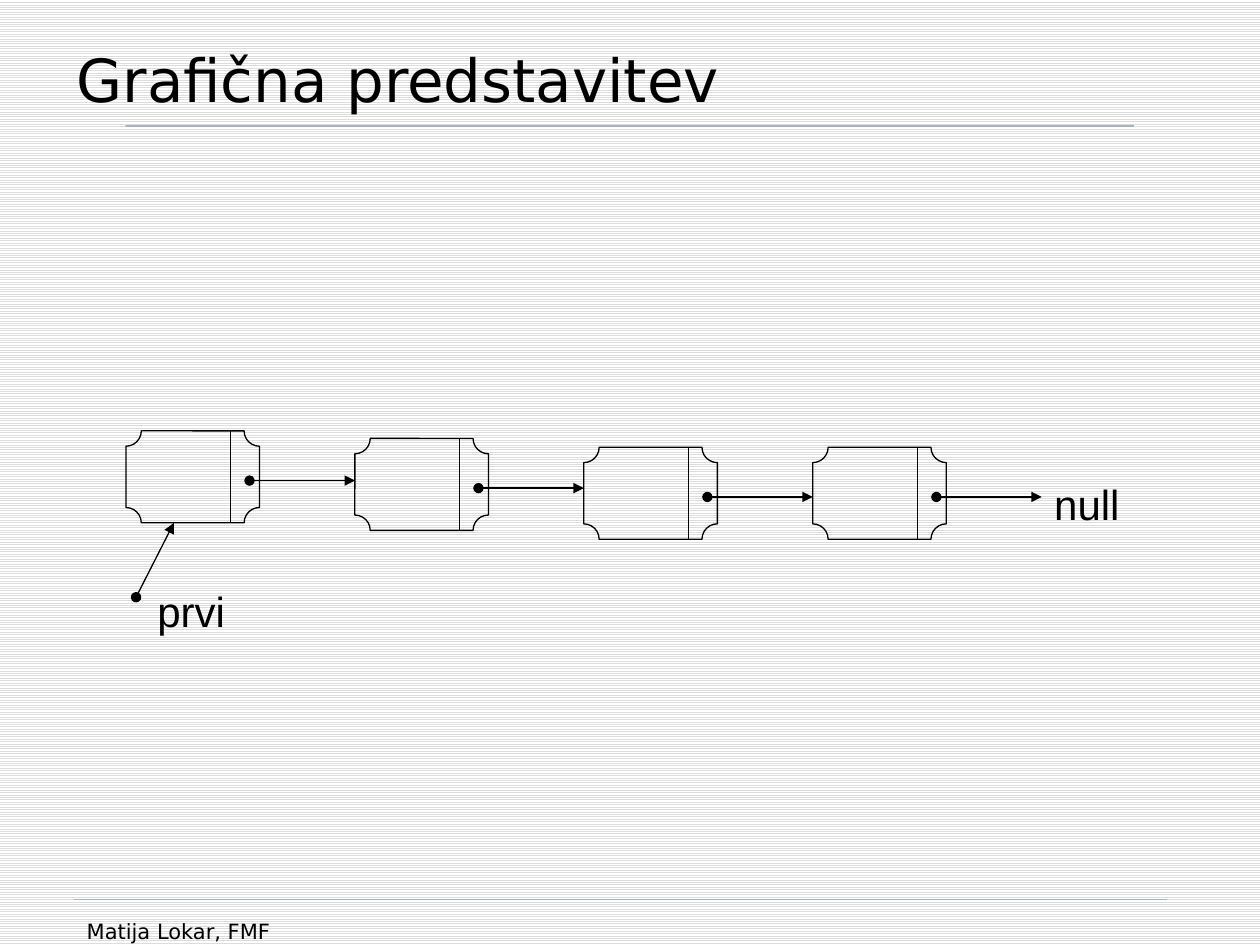
from lxml import etree
from pptx import Presentation, util as u
from pptx.dml.color import RGBColor
from pptx.enum import dml, shapes, text
from pptx.oxml.ns import qn

WIDTH, HEIGHT = 10, 7.5
INK, ACCENT = "000000", "A3B2C1"
PITCH = 1.817  # from the left side of one node to the next
NODE_WIDTH, NODE_HEIGHT = 1.06, 0.73
NODE_TOPS = [3.42, 3.48, 3.55, 3.55]


def color(value):
    return RGBColor.from_string(value)


def style_line(line, hue, weight):
    line.color.rgb = color(hue)
    line.width = u.Pt(weight)


def add_line(page, start, end, hue=INK, weight=0.75, arrow=False):
    """Draw a straight line; an arrow has a dot at its start."""
    line = page.shapes.add_connector(
        shapes.MSO_CONNECTOR.STRAIGHT, *map(u.Inches, (*start, *end)))
    style_line(line.line, hue, weight)
    if arrow:
        outline = line.line._get_or_add_ln()
        for tag, kind in {"a:headEnd": "oval", "a:tailEnd": "triangle"}.items():
            etree.SubElement(outline, qn(tag), type=kind)
    etree.SubElement(line._element.spPr, qn("a:effectLst"))
    return line


def add_text(page, words, place, size, name, anchor=text.MSO_ANCHOR.TOP):
    box = page.shapes.add_textbox(*map(u.Inches, place))
    frame = box.text_frame
    frame.word_wrap = True
    frame.vertical_anchor = anchor
    span = frame.paragraphs[0].add_run()
    span.text = words
    for key, value in {"size": u.Pt(size), "name": name}.items():
        setattr(span.font, key, value)
    span.font.color.rgb = color(INK)


def add_header(page, left, top, width):
    """Title above a thick bar that runs on as a thin line."""
    add_text(page, "Grafična predstavitev", (0.51, 0.21, 8.75, 0.75), 34,
             "DejaVu Sans", text.MSO_ANCHOR.BOTTOM)
    right, bar_right, bottom = left + width, left + 0.585 * width, top + 0.12
    builder = page.shapes.build_freeform(left, top, scale=u.Inches(1))
    builder.add_line_segments(
        [(bar_right, top), (bar_right, bottom), (left, bottom)], close=True)
    builder.move_to(left, top)
    builder.add_line_segments([(right, top)], close=False)
    rule = builder.convert_to_shape()
    rule.shadow.inherit = False
    rule.fill.solid()
    rule.fill.fore_color.rgb = color(ACCENT)
    style_line(rule.line, ACCENT, 0.75)


def add_footer(page, left, top, width):
    add_line(page, (left, top), (left + width, top), ACCENT, 0.25)
    add_text(page, "Matija Lokar, FMF", (left, top + 0.1, 2.17, 0.52), 12,
             "DejaVu Sans")


def add_node(page, left, top, width, height):
    """List node: a plaque, its divider and the pointer to the next node."""
    plaque = page.shapes.add_shape(
        shapes.MSO_SHAPE.PLAQUE, *map(u.Inches, (left, top, width, height)))
    plaque.adjustments[0] = 0.167
    plaque.shadow.inherit = False
    plaque.fill.background()
    style_line(plaque.line, INK, 0.75)
    divider = left + 0.785 * width
    add_line(page, (divider, top), (divider, top + height))
    level = top + 0.54 * height
    add_line(page, (left + 0.925 * width, level), (left + PITCH, level), arrow=True)


def add_linked_list(page, left):
    for index, top in enumerate(NODE_TOPS):
        add_node(page, left + index * PITCH, top, NODE_WIDTH, NODE_HEIGHT)
    first_bottom = NODE_TOPS[0] + NODE_HEIGHT
    add_line(page, (left + 0.08, first_bottom + 0.59),
             (left + 0.38, first_bottom), arrow=True)
    add_text(page, "prvi", (left + 0.15, first_bottom + 0.45, 1.44, 0.5), 24, "Arial")
    add_text(page, "null", (left + len(NODE_TOPS) * PITCH, NODE_TOPS[-1] + 0.2,
                            0.98, 0.5), 24, "Arial")


def main():
    deck = Presentation()
    deck.slide_width, deck.slide_height = u.Inches(WIDTH), u.Inches(HEIGHT)
    page = deck.slides.add_slide(deck.slide_layouts[6])
    fill = page.background.fill
    fill.patterned()
    fill.pattern = dml.MSO_PATTERN.LIGHT_HORIZONTAL
    fill.fore_color.rgb = color("DDDDDD")
    fill.back_color.rgb = color("FFFFFF")
    add_header(page, 0.67, 1.23, 8.7)
    add_footer(page, 0.59, 7.14, 8.67)
    add_linked_list(page, 1)
    deck.save("out.pptx")


if __name__ == "__main__":
    main()
